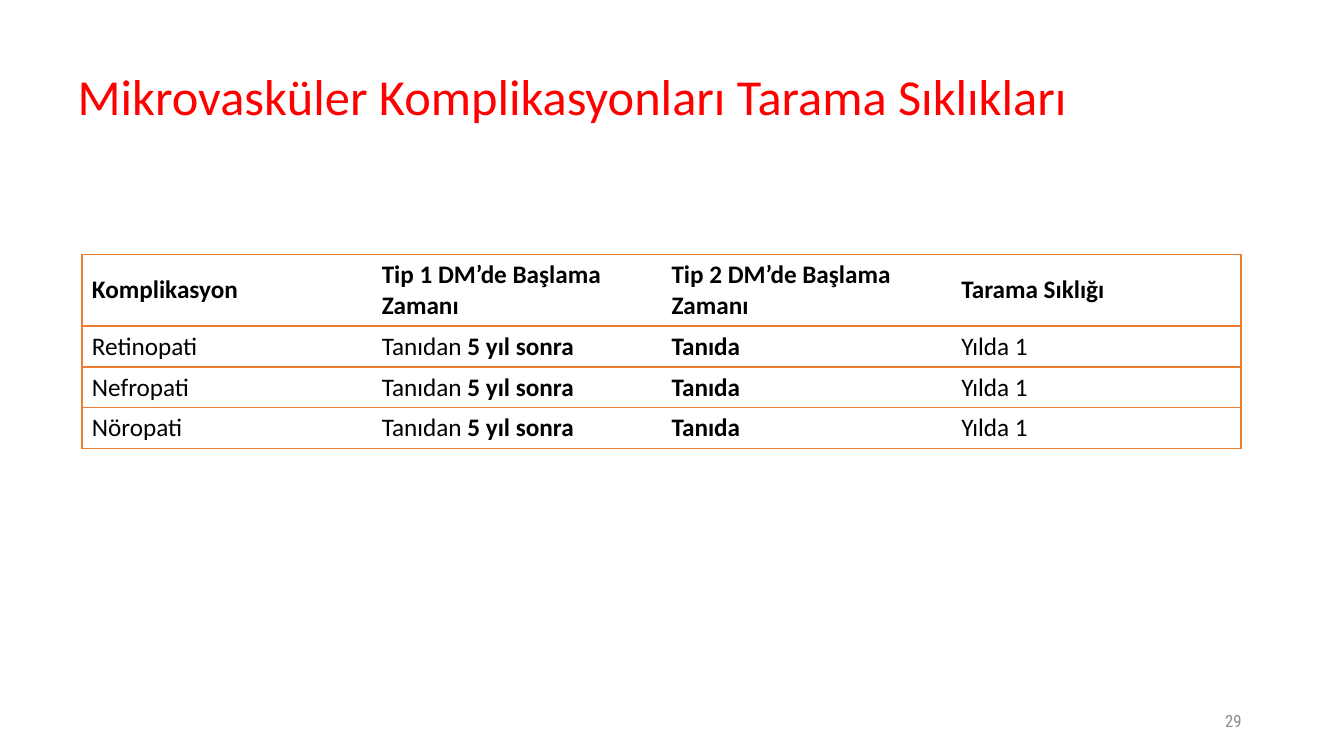
from lxml import etree
from pptx import Presentation
from pptx.dml.color import RGBColor
from pptx.enum import text
from pptx.oxml import ns
from pptx.util import Pt

ORANGE = "ED7D31"
FONT = "Calibri"
HEAD = ["Komplikasyon", "Tip 1 DM’de Başlama Zamanı",
        "Tip 2 DM’de Başlama Zamanı", "Tarama Sıklığı"]
NAMES = ["Retinopati", "Nefropati", "Nöropati"]


def color(code):
    return RGBColor.from_string(code)


def style(run, size, code, font=FONT, bold=False):
    run.font.size = Pt(size)
    run.font.name = font
    run.font.bold = bold
    run.font.color.rgb = color(code)


def set_title(slide, words):
    title = slide.shapes.title
    title.left, title.top = Pt(48.24), Pt(46)
    title.width, title.height = Pt(828), Pt(50)
    frame = title.text_frame
    frame.text = words
    frame.word_wrap = True
    frame.auto_size = text.MSO_AUTO_SIZE.NONE
    frame.vertical_anchor = text.MSO_ANCHOR.MIDDLE
    para = frame.paragraphs[0]
    para.alignment = text.PP_ALIGN.LEFT
    para.line_spacing = 0.9
    style(para.runs[0], 36, "FF0000")


def set_edge(cell, side, shown):
    props = cell._tc.get_or_add_tcPr()
    line = etree.SubElement(props, ns.qn("a:ln" + side), w=str(Pt(1)))
    if shown:
        fill = etree.SubElement(line, ns.qn("a:solidFill"))
        etree.SubElement(fill, ns.qn("a:srgbClr"), val=ORANGE)
    else:
        etree.SubElement(line, ns.qn("a:noFill"))


def fill_cell(cell, parts, first, last):
    # Vertical lines only at the outer edges of the table
    for side, shown in (("L", first), ("R", last), ("T", True), ("B", True)):
        set_edge(cell, side, shown)
    cell.fill.solid()
    cell.fill.fore_color.rgb = color("FFFFFF")
    cell.vertical_anchor = text.MSO_ANCHOR.MIDDLE
    para = cell.text_frame.paragraphs[0]
    for words, bold in parts:
        run = para.add_run()
        run.text = words
        style(run, 18, "000000", bold=bold)


def add_grid(slide, rows):
    count = len(rows[0])
    frame = slide.shapes.add_table(len(rows), count, Pt(58.5), Pt(181.5),
                                   Pt(828), Pt(139))
    table = frame.table
    table.first_row = table.horz_banding = False
    for col in table.columns:
        col.width = Pt(828 / count)
    for i, parts in enumerate(rows):
        table.rows[i].height = Pt(29.2 if i else 51.4)
        for j, part in enumerate(parts):
            fill_cell(table.cell(i, j), part, j == 0, j == count - 1)


def add_number(slide, words):
    box = slide.shapes.add_textbox(Pt(678), Pt(500.5), Pt(216), Pt(28.8))
    frame = box.text_frame
    frame.text = words
    frame.word_wrap = True
    frame.vertical_anchor = text.MSO_ANCHOR.MIDDLE
    para = frame.paragraphs[0]
    para.alignment = text.PP_ALIGN.RIGHT
    style(para.runs[0], 12, "8C8C8C", "Roboto Condensed")


def main():
    deck = Presentation()
    deck.slide_width, deck.slide_height = Pt(960), Pt(540)
    slide = deck.slides.add_slide(deck.slide_layouts[5])

    set_title(slide, "Mikrovasküler Komplikasyonları Tarama Sıklıkları")

    # Each cell is a list of (words, bold) parts
    rows = [[[(words, True)] for words in HEAD]]
    for name in NAMES:
        rows.append([[(name, False)],
                     [("Tanıdan ", False), ("5 yıl sonra", True)],
                     [("Tanıda", True)],
                     [("Yılda 1", False)]])
    add_grid(slide, rows)

    add_number(slide, "29")
    deck.save("out.pptx")


if __name__ == "__main__":
    main()
